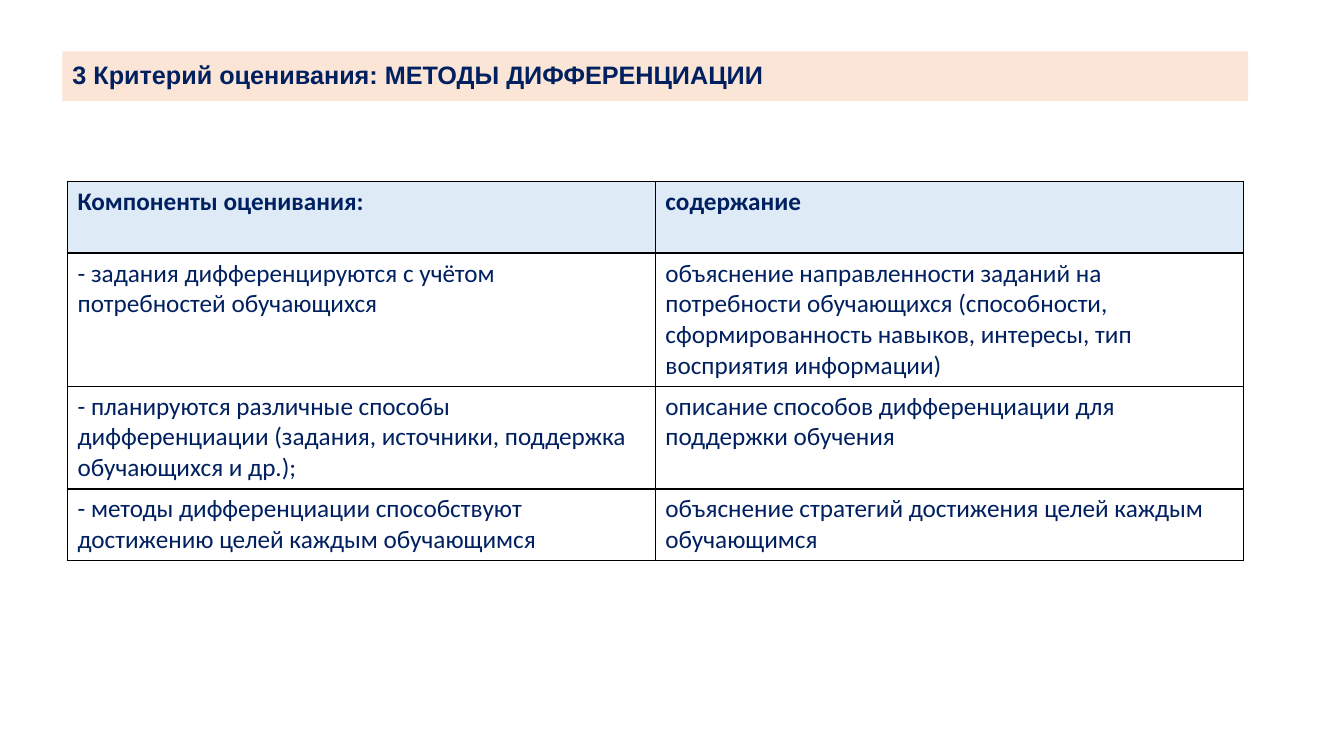
import pptx
import pptx.util
import pptx.dml.color
import pptx.enum.shapes
import pptx.enum.text
import pptx.oxml.ns
import lxml.etree

Inches = pptx.util.Inches
RGB = pptx.dml.color.RGBColor.from_string
COLORS = {"navy": "002060", "peach": "FBE5D6", "sky": "DEEBF7", "border": "000000"}


def add_text(tf, text, font="Calibri", size=18, bold=False, color="navy", spacing=1.0):
    tf.word_wrap = True
    p = tf.paragraphs[0]
    p.alignment = pptx.enum.text.PP_ALIGN.LEFT
    p.line_spacing = spacing
    r = p.add_run()
    r.text = text
    r.font.name = font
    r.font.size = pptx.util.Pt(size)
    r.font.bold = bold
    r.font.color.rgb = RGB(COLORS[color])


def add_borders(cell, color="border", width=1):
    qn = pptx.oxml.ns.qn
    tcPr = cell._tc.get_or_add_tcPr()
    for side in ("a:lnL", "a:lnR", "a:lnT", "a:lnB"):
        ln = lxml.etree.SubElement(tcPr, qn(side), w=str(pptx.util.Pt(width)))
        fill = lxml.etree.SubElement(ln, qn("a:solidFill"))
        lxml.etree.SubElement(fill, qn("a:srgbClr"), val=COLORS[color])


prs = pptx.Presentation()
prs.slide_width, prs.slide_height = Inches(13.33), Inches(7.5)
s = prs.slides.add_slide(prs.slide_layouts[6])

# Title band
sp = s.shapes.add_shape(pptx.enum.shapes.MSO_SHAPE.RECTANGLE,
                        Inches(0.62), Inches(0.51), Inches(11.76), Inches(0.49))
sp.shadow.inherit = False
sp.fill.solid()
sp.fill.fore_color.rgb = RGB(COLORS["peach"])
sp.line.fill.background()
sp.text_frame.vertical_anchor = pptx.enum.text.MSO_ANCHOR.MIDDLE
add_text(sp.text_frame, "3 Критерий оценивания: МЕТОДЫ ДИФФЕРЕНЦИАЦИИ",
         font="Arial", bold=True, spacing=0.9)

# Criteria table: row height, component, content
rows = [
    (0.71, "Компоненты оценивания:", "содержание"),
    (1.32, "- задания дифференцируются с учётом потребностей обучающихся",
     "объяснение направленности заданий на потребности обучающихся (способности, "
     "сформированность навыков, интересы, тип восприятия информации)"),
    (1.02, "- планируются различные способы дифференциации (задания, источники, "
     "поддержка обучающихся и др.);",
     "описание способов дифференциации для поддержки обучения"),
    (0.71, "- методы дифференциации способствуют достижению целей каждым обучающимся",
     "объяснение стратегий достижения целей каждым обучающимся"),
]
table = s.shapes.add_table(len(rows), 2, Inches(0.67), Inches(1.8), Inches(11.66),
                           Inches(sum(row[0] for row in rows))).table
for col in table.columns:
    col.width = Inches(5.83)
for i, (height, *texts) in enumerate(rows):
    table.rows[i].height = Inches(height)
    for j, text in enumerate(texts):
        cell = table.cell(i, j)
        add_borders(cell)
        if i == 0:
            cell.fill.solid()
            cell.fill.fore_color.rgb = RGB(COLORS["sky"])
        else:
            cell.fill.background()
        add_text(cell.text_frame, text, bold=i == 0)

prs.save("out.pptx")
